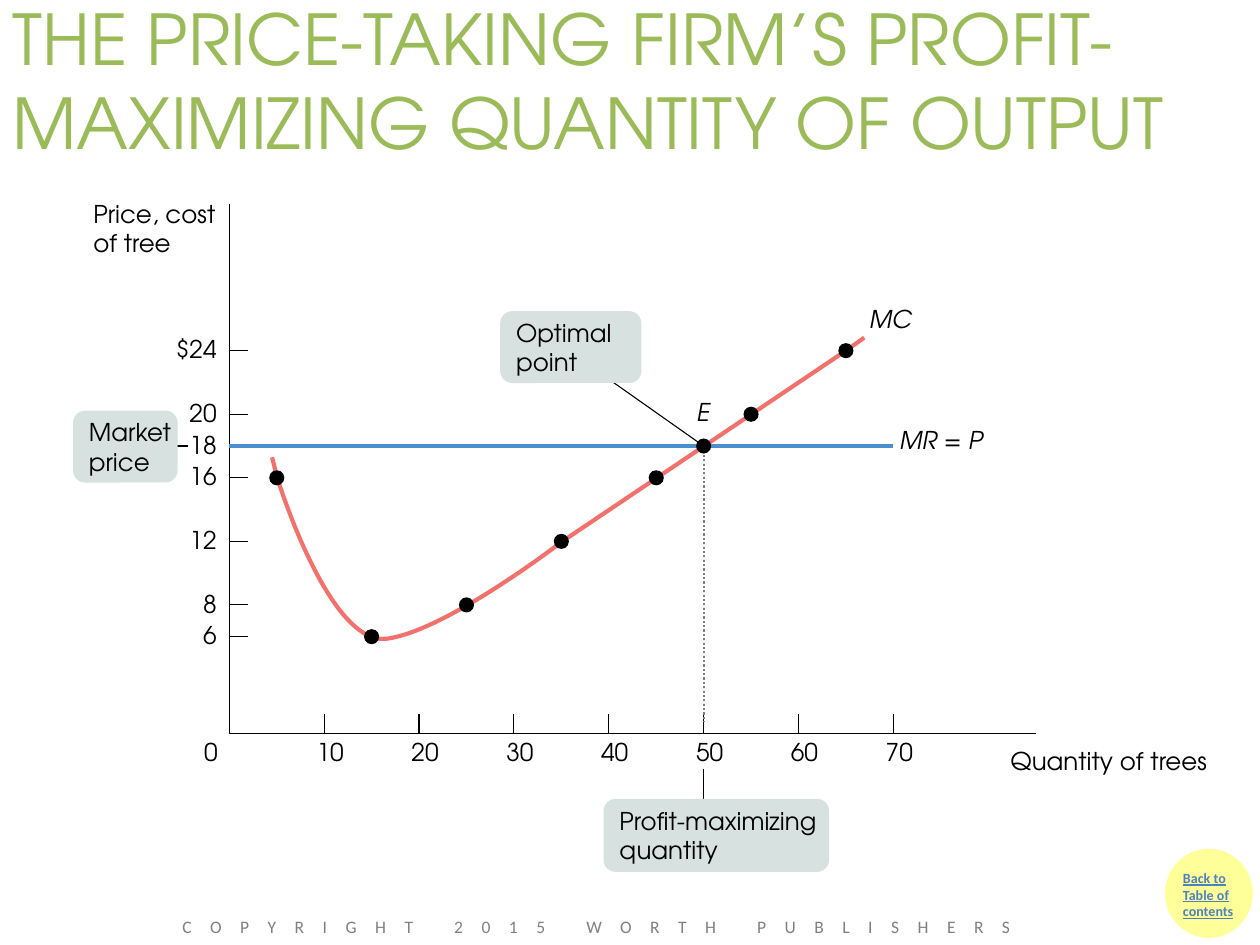
from lxml.etree import SubElement
from pptx import Presentation
from pptx.dml.color import RGBColor
from pptx.enum.dml import MSO_LINE_DASH_STYLE as Dash
from pptx.enum.shapes import MSO_CONNECTOR as Connector, MSO_SHAPE as Shape
from pptx.enum.text import MSO_ANCHOR as Anchor, MSO_AUTO_SIZE as AutoSize, PP_ALIGN as Align
from pptx.oxml.ns import qn
from pptx.util import Inches, Pt

COLORS = {
    "black": "000000", "title": "9BBB59", "cost": "F3716D", "price": "4B8FCC",
    "callout": "D7E2E0", "gray": "808080", "badge": "FFFF99", "link": "4F81BD",
}
COLUMNS, ROWS = 10, 7.5
ORIGIN_X, ORIGIN_Y = 1.82, 5.82
COLUMNS_PER_TREE = 5.27 / 70
ROWS_PER_DOLLAR = 2.27 / 18
TICK = 0.15
THIN = 0.63


def plot(quantity, price):
    """Turn chart values into columns and rows."""
    return ORIGIN_X + quantity * COLUMNS_PER_TREE, ORIGIN_Y - 0.01 - price * ROWS_PER_DOLLAR


def bezier(start, first, second, end, steps=30):
    """Points of a cubic curve, without its start."""
    points = []
    for step in range(1, steps + 1):
        t = step / steps
        weights = ((1 - t) ** 3, 3 * t * (1 - t) ** 2, 3 * t * t * (1 - t), t ** 3)
        corners = (start, first, second, end)
        points.append(tuple(sum(w * c[axis] for w, c in zip(weights, corners))
                            for axis in (0, 1)))
    return points


class SlideBuilder:
    font = "TeX Gyre Adventor"
    size = 14

    def __init__(self, deck, layout):
        self.slide = deck.slides.add_slide(layout)
        self.shapes = self.slide.shapes
        self.column = deck.slide_width / COLUMNS
        self.row = deck.slide_height / ROWS

    def place(self, *lengths):
        """Grid lengths, across and down in turn, as EMU."""
        return [round(length * (self.row if index % 2 else self.column))
                for index, length in enumerate(lengths)]

    def stroke(self, line, color, width, dash=None):
        line.color.rgb = RGBColor.from_string(COLORS[color])
        line.width = Pt(width)
        if dash:
            line.dash_style = dash

    def add_text(self, frame, runs, insets=(0, 0, 0, 0), align=Align.LEFT, anchor=Anchor.TOP,
                 color="black", size=None, font=None, bold=None, underline=None, spacing=None):
        """Fill a frame with (text, italic) runs."""
        frame.word_wrap = True
        frame.auto_size = AutoSize.NONE
        frame.vertical_anchor = anchor
        (frame.margin_left, frame.margin_top,
         frame.margin_right, frame.margin_bottom) = map(Inches, insets)
        para = frame.paragraphs[0]
        para.alignment = align
        for text, italic in runs:
            span = para.add_run()
            span.text = text
            span.font.name = font or self.font
            span.font.size = Pt(size or self.size)
            span.font.color.rgb = RGBColor.from_string(COLORS[color])
            span.font.italic = italic
            span.font.bold = bold
            span.font.underline = underline
            if spacing:
                span.font._element.set("spc", str(round(spacing * 100)))

    def title(self, text, *area):
        box = self.shapes.title
        box.left, box.top, box.width, box.height = self.place(*area)
        self.add_text(box.text_frame, [(text, None)], (0.1, 0.05, 0.1, 0.05),
                      anchor=Anchor.MIDDLE, color="title", size=40)

    def label(self, text, *area, italic=None, **style):
        self.formula([(text, italic)], *area, **style)

    def formula(self, runs, *area, **style):
        box = self.shapes.add_textbox(*self.place(*area))
        self.add_text(box.text_frame, runs, **style)

    def line(self, start, end, color="black", width=THIN, dash=None):
        link = self.shapes.add_connector(Connector.STRAIGHT, *self.place(*start, *end))
        self.stroke(link.line, color, width, dash)
        SubElement(link._element.spPr, qn("a:effectLst"))

    def polyline(self, points, color="black", width=THIN):
        corners = [self.place(*point) for point in points]
        builder = self.shapes.build_freeform(*corners[0])
        builder.add_line_segments(corners[1:], close=False)
        shape = builder.convert_to_shape()
        shape.shadow.inherit = False
        shape.fill.background()
        self.stroke(shape.line, color, width)

    def solid(self, kind, color, *area):
        shape = self.shapes.add_shape(kind, *self.place(*area))
        shape.shadow.inherit = False
        shape.fill.solid()
        shape.fill.fore_color.rgb = RGBColor.from_string(COLORS[color])
        shape.line.fill.background()
        return shape

    def dot(self, x, y, radius=0.06):
        self.solid(Shape.OVAL, "black", x - radius, y - radius, 2 * radius, 2 * radius)

    def callout(self, text, *area):
        shape = self.solid(Shape.ROUNDED_RECTANGLE, "callout", *area)
        self.add_text(shape.text_frame, [(text, None)], (0.1, 0, 0, 0), anchor=Anchor.MIDDLE)


def draw_axes(page):
    page.polyline([(8.22, ORIGIN_Y), (ORIGIN_X, ORIGIN_Y), (ORIGIN_X, 1.62)])
    for price in (24, 20, 18, 16, 12, 8, 6):
        x, y = plot(0, price)
        page.line((x, y), (x + TICK, y))
        page.label(f"${price}" if price == 24 else str(price),
                   1.22, y - 0.13, 0.5, 0.24, align=Align.RIGHT)
    for quantity in range(10, 80, 10):
        x, _ = plot(quantity, 0)
        page.line((x, ORIGIN_Y), (x, ORIGIN_Y - TICK))
        page.label(str(quantity), x - 0.06, 5.85, 0.4, 0.24)
    page.label("0", 1.62, 5.85, 0.2, 0.24)
    page.label("Price, cost of tree", 0.74, 1.58, 1.12, 0.47)
    page.label("Quantity of trees", 8.02, 5.92, 1.73, 0.24)


def draw_curves(page):
    optimum = plot(50, 18)
    low, bend = (3.07, 5.07), (4.46, 4.3)
    cost = [(2.16, 3.63), (2.2, 3.79)]
    cost += bezier(cost[-1], cost[-1], (2.61, 5.13), low)
    cost += bezier(low, (3.54, 5.01), bend, bend)
    cost += [(6.72, 2.78), (6.86, 2.68)]
    page.polyline(cost, "cost", 2.38)
    page.line(plot(0, 18), plot(70, 18), "price", 1.75)
    page.line((optimum[0], 3.61), (optimum[0], 5.73), "gray", 1.25, Dash.ROUND_DOT)
    for point in ((5, 16), (15, 6), (25, 8), (35, 12), (45, 16), (50, 18), (55, 20), (65, 24)):
        page.dot(*plot(*point))
    page.label("MC", 6.9, 2.41, 0.5, 0.24, italic=True)
    page.label("E", 5.53, 3.15, 0.3, 0.24, italic=True)
    page.formula([("MR", True), (" = ", None), ("P", True)], 7.14, 3.37, 1, 0.24)


def draw_callouts(page):
    optimum = plot(50, 18)
    page.line((4.79, 2.98), optimum)
    page.line((1.32, optimum[1]), (1.49, optimum[1]))
    page.line((optimum[0], 6.1), (optimum[0], 6.34))
    page.callout("Optimal point", 3.97, 2.47, 1.12, 0.57)
    page.callout("Market price", 0.58, 3.26, 0.83, 0.57)
    page.callout("Profit-maximizing quantity", 4.79, 6.34, 1.79, 0.58)


def main():
    deck = Presentation()
    deck.slide_width, deck.slide_height = Inches(10), Inches(7.5)
    page = SlideBuilder(deck, deck.slide_layouts.get_by_name("Title Only"))
    padding = (0.1, 0.05, 0.1, 0.05)
    badge = page.solid(Shape.OVAL, "badge", 9.26, 6.75, 0.67, 0.68)
    page.stroke(badge.line, "badge", 2)
    page.label("Back to Table of contents", 9.29, 6.85, 0.72, 0.65, insets=padding,
               color="link", size=8, font="Calibri", bold=True, underline=True)
    page.title("THE PRICE-TAKING FIRM’S PROFIT-MAXIMIZING QUANTITY OF OUTPUT", 0, 0.17, 10, 0.92)
    draw_axes(page)
    draw_curves(page)
    draw_callouts(page)
    page.label("COPYRIGHT 2015 WORTH PUBLISHERS", 1.35, 7.22, 7.76, 0.25, insets=padding,
               color="gray", size=10, font="Calibri", spacing=10.6)
    deck.save("out.pptx")


if __name__ == "__main__":
    main()
